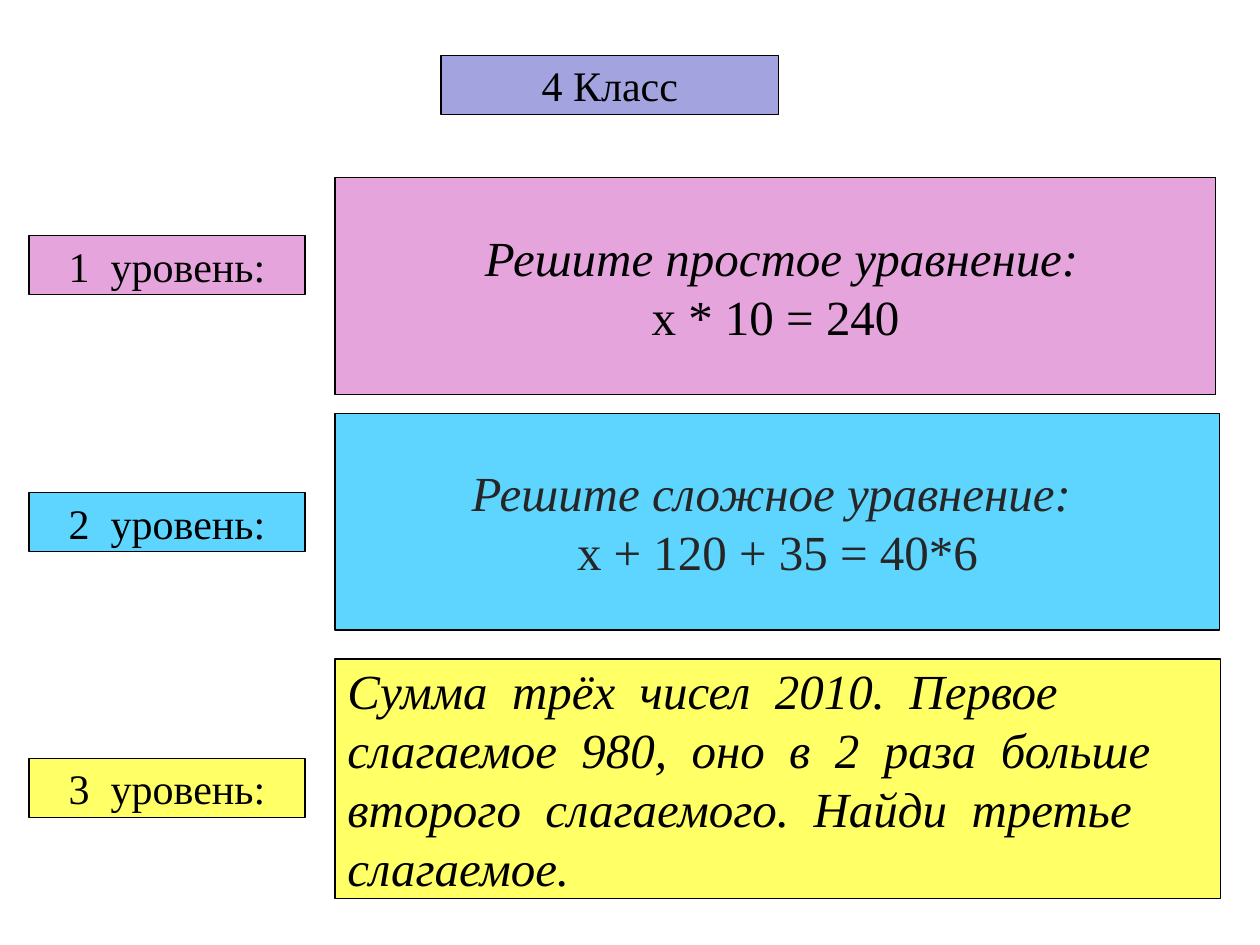
from pptx import Presentation
from pptx.dml.color import RGBColor
from pptx.enum.shapes import MSO_SHAPE
from pptx.enum.text import MSO_ANCHOR, PP_ALIGN
from pptx.util import Inches, Pt

RECTANGLE = MSO_SHAPE.RECTANGLE
MIDDLE = MSO_ANCHOR.MIDDLE
CENTER, JUSTIFY = PP_ALIGN.CENTER, PP_ALIGN.JUSTIFY

COLORS = {
    "violet": "A3A3E0",
    "pink": "E5A5DC",
    "blue": "5DD5FF",
    "yellow": "FFFF66",
    "black": "000000",
    "charcoal": "262626",
}
LABEL_HEIGHT = 0.47
TASK_LEFT = 2.66

# label top, fill, text colour, task top, width, height, alignment,
# lines as (text, italic)
LEVELS = [
    (1.87, "pink", "black", 1.41, 6.99, 1.72, CENTER,
     [(" Решите простое уравнение:", True), ("х * 10 = 240", False)]),
    (3.91, "blue", "charcoal", 3.28, 7.02, 1.72, CENTER,
     [("Решите сложное уравнение: ", True), ("х + 120 + 35 = 40*6", False)]),
    (6.02, "yellow", "black", 5.23, 7.03, 1.9, JUSTIFY,
     [("Сумма  трёх  чисел  2010.  Первое ", True),
      ("слагаемое  980,  оно  в  2  раза  больше", True),
      ("второго  слагаемого.  Найди  третье", True),
      ("слагаемое.", True)]),
]


class SlideBuilder:
    font_name = "Times New Roman"
    label_size = 24
    task_size = 28

    def __init__(self, page):
        self.page = page

    def color(self, name):
        return RGBColor.from_string(COLORS[name])

    def panel(self, left, top, width, height, fill, lines, size,
              ink="black", align=CENTER):
        """Add an outlined rectangle with one paragraph per (text, italic)."""
        box = self.page.shapes.add_shape(
            RECTANGLE, Inches(left), Inches(top), Inches(width), Inches(height))
        box.shadow.inherit = False
        box.fill.solid()
        box.fill.fore_color.rgb = self.color(fill)
        box.line.color.rgb = self.color("black")
        box.line.width = Pt(0.75)
        frame = box.text_frame
        frame.word_wrap = False
        frame.vertical_anchor = MIDDLE
        for index, (text, italic) in enumerate(lines):
            para = frame.add_paragraph() if index else frame.paragraphs[0]
            para.text = text
            para.alignment = align
            para.font.name = self.font_name
            para.font.size = Pt(size)
            para.font.italic = italic
            para.font.color.rgb = self.color(ink)

    def label(self, left, top, width, fill, text):
        self.panel(left, top, width, LABEL_HEIGHT, fill, [(text, False)],
                   self.label_size)

    def task(self, top, width, height, fill, lines, ink, align):
        self.panel(TASK_LEFT, top, width, height, fill, lines,
                   self.task_size, ink, align)


def main():
    deck = Presentation()
    deck.slide_width, deck.slide_height = Inches(10), Inches(7.5)
    builder = SlideBuilder(deck.slides.add_slide(deck.slide_layouts[6]))

    builder.label(3.5, 0.44, 2.68, "violet", "4 Класс")
    for number, level in enumerate(LEVELS, start=1):
        label_top, fill, ink, top, width, height, align, lines = level
        builder.task(top, width, height, fill, lines, ink, align)
        builder.label(0.23, label_top, 2.19, fill, f"{number}  уровень:")

    deck.save("out.pptx")


if __name__ == "__main__":
    main()
